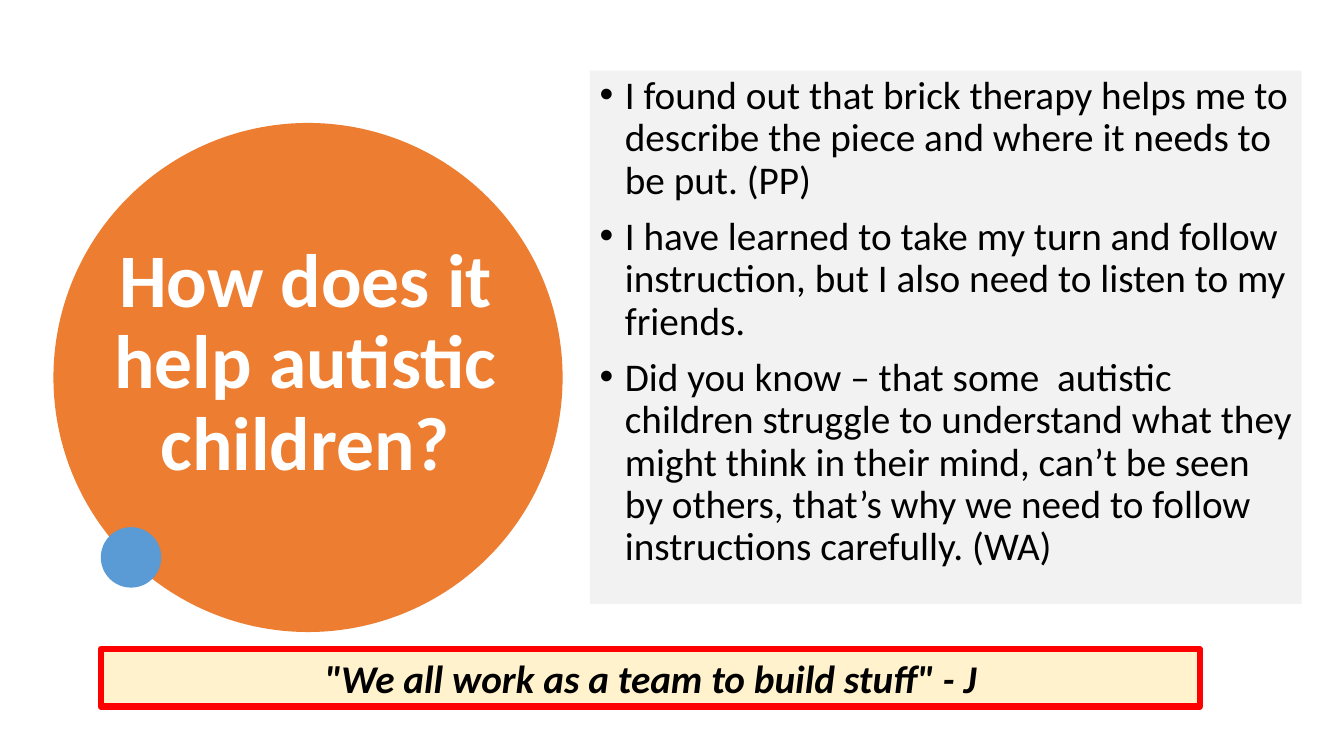
from pptx import Presentation
from pptx.dml.color import RGBColor
from pptx.enum.shapes import MSO_SHAPE
from pptx.enum.text import MSO_ANCHOR, PP_ALIGN
from pptx.oxml.ns import qn
from pptx.util import Inches, Pt
from lxml.etree import SubElement

deck = Presentation()
deck.slide_width, deck.slide_height = Inches(13.33), Inches(7.5)
slide = deck.slides.add_slide(deck.slide_layouts[6])


def add(kind, box, fill, anchor=MSO_ANCHOR.MIDDLE):
    shape = slide.shapes.add_shape(kind, *[Inches(n) for n in box])
    shape.shadow.inherit = False
    shape.line.fill.background()
    if fill:
        shape.fill.solid()
        shape.fill.fore_color.rgb = RGBColor.from_string(fill)
    else:
        shape.fill.background()
    shape.text_frame.word_wrap = True
    shape.text_frame.vertical_anchor = anchor
    return shape


def write(para, text, size, color, align, bold=False, slant=False):
    para.alignment = align
    run = para.add_run()
    run.text = text
    font = run.font
    font.name, font.size = "Calibri", Pt(size)
    font.bold, font.italic = bold, slant
    font.color.rgb = RGBColor.from_string(color)


add(MSO_SHAPE.OVAL, (0.53, 1.22, 5.05, 5.05), "ED7D31")

title = add(MSO_SHAPE.RECTANGLE, (0.54, 1.22, 4.98, 4.79), None)
head = title.text_frame.paragraphs[0]
head.line_spacing = 0.9
write(head, "How does it\u00a0help autistic children?".replace("\u00a0", " "),
      54, "FFFFFF", PP_ALIGN.CENTER, True)

add(MSO_SHAPE.OVAL, (1, 5.23, 0.6, 0.6), "5B9BD5")

points = [
    "I found out that brick therapy helps me to describe the piece and where it needs to be put. (PP)",
    "I have learned to take my turn and follow instruction, but I also need to listen to my friends.",
    "Did you know – that some  autistic children struggle to understand what they might think in their mind, "
    "can’t be seen by others, that’s why we need to follow instructions carefully. (WA)",
]
panel = add(MSO_SHAPE.RECTANGLE, (5.85, 0.7, 7.06, 5.29), "F2F2F2", MSO_ANCHOR.TOP)
frame = panel.text_frame
for i, point in enumerate(points):
    para = frame.add_paragraph() if i else frame.paragraphs[0]
    para.line_spacing = 0.9
    para.space_before = Pt(10 if i else 0)
    props = para._p.get_or_add_pPr()
    props.set("marL", str(Inches(0.25)))
    props.set("indent", str(Inches(-0.25)))
    SubElement(props, qn("a:buFont")).set("typeface", "Arial")
    SubElement(props, qn("a:buChar")).set("char", "•")
    write(para, point, 28, "000000", PP_ALIGN.LEFT)

quote = add(MSO_SHAPE.RECTANGLE, (1, 6.44, 10.9, 0.57), "FFF2CC")
quote.line.color.rgb = RGBColor.from_string("FF0000")
quote.line.width = Pt(4.5)
write(quote.text_frame.paragraphs[0], '"We all work as a team to build stuff" - J',
      28, "000000", PP_ALIGN.CENTER, True, True)

deck.save("out.pptx")
